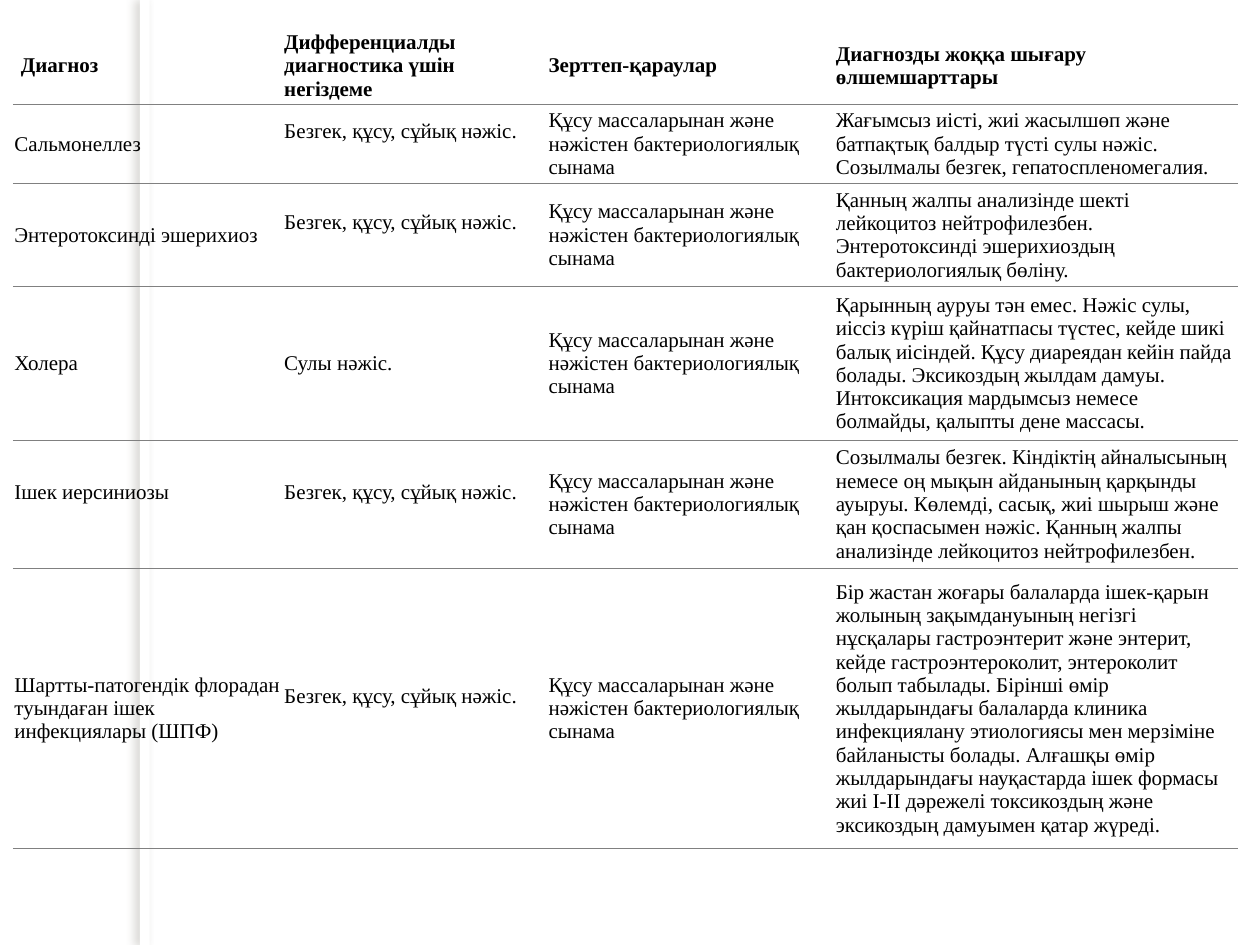
from lxml import etree
from pptx import Presentation
from pptx.dml.color import RGBColor
from pptx.enum.shapes import MSO_SHAPE
from pptx.enum.text import MSO_ANCHOR
from pptx.oxml.ns import qn
from pptx.util import Cm, Pt

RECTANGLE = MSO_SHAPE.RECTANGLE
MIDDLE = MSO_ANCHOR.MIDDLE

COLORS = {"text": "000000", "rule": "808080", "bar": "FFFFFF", "shadow": "706B5F"}
INSET = Cm(0.03)
HEADER_INDENT = Cm(0.13)
TEXT_RAISE = Cm(0.5)

FEVER = "Безгек, құсу, сұйық нәжіс."
STOOL_TEST = "Құсу массаларынан және нәжістен бактериологиялық сынама"

HEADERS = [
    "Диагноз",
    "Дифференциалды диагностика үшін негіздеме",
    "Зерттеп-қараулар",
    "Диагнозды жоққа шығару өлшемшарттары",
]
# Diagnosis, grounds, exclusion criteria; the examination is the same for all
DIAGNOSES = [
    ("Сальмонеллез", FEVER,
     "Жағымсыз иісті, жиі жасылшөп және батпақтық балдыр түсті сулы нәжіс. "
     "Созылмалы безгек, гепатоспленомегалия."),
    ("Энтеротоксинді эшерихиоз", FEVER,
     "Қанның жалпы анализінде шекті лейкоцитоз нейтрофилезбен. "
     "Энтеротоксинді эшерихиоздың бактериологиялық бөліну."),
    ("Холера", "Сулы нәжіс.",
     "Қарынның ауруы тән емес. Нәжіс сулы, иіссіз күріш қайнатпасы түстес, "
     "кейде шикі балық иісіндей. Құсу диареядан кейін пайда болады. "
     "Эксикоздың жылдам дамуы. Интоксикация мардымсыз немесе болмайды, "
     "қалыпты дене массасы."),
    ("Ішек иерсиниозы", FEVER,
     "Созылмалы безгек. Кіндіктің айналысының немесе оң мықын айданының "
     "қарқынды ауыруы. Көлемді, сасық, жиі шырыш және қан қоспасымен нәжіс. "
     "Қанның жалпы анализінде лейкоцитоз нейтрофилезбен."),
    ("Шартты-патогендік флорадан туындаған ішек инфекциялары (ШПФ)", FEVER,
     "Бір жастан жоғары балаларда ішек-қарын жолының зақымдануының негізгі "
     "нұсқалары гастроэнтерит және энтерит, кейде гастроэнтероколит, "
     "энтероколит болып табылады. Бірінші өмір жылдарындағы балаларда клиника "
     "инфекциялану этиологиясы мен мерзіміне байланысты болады. Алғашқы өмір "
     "жылдарындағы науқастарда ішек формасы жиі І-ІІ дәрежелі токсикоздың "
     "және эксикоздың дамуымен қатар жүреді."),
]
ROWS = [HEADERS] + [(name, grounds, STOOL_TEST, criteria)
                    for name, grounds, criteria in DIAGNOSES]
RAISED = {FEVER, "Ішек иерсиниозы"}
COLUMN_WIDTHS = [5.44, 5.33, 5.79, 8.13]
ROW_HEIGHTS = [1.57, 1.59, 2.08, 3.1, 2.58, 5.65]

CELL_FORMAT = {
    "vertical_anchor": MIDDLE,
    "margin_left": INSET,
    "margin_right": INSET,
    "margin_top": INSET,
    "margin_bottom": INSET,
}
FONT_FORMAT = {"name": "Times New Roman", "size": Pt(12)}


def add_color(parent, color, alpha=None):
    rgb = etree.SubElement(parent, qn("a:srgbClr"), val=COLORS[color])
    if alpha is not None:
        etree.SubElement(rgb, qn("a:alpha"), val=str(alpha * 1000))


def add_border(cell, side, visible):
    line = etree.SubElement(cell._tc.get_or_add_tcPr(), qn(f"a:ln{side}"),
                            w=str(Pt(0.75)))
    if visible:
        add_color(etree.SubElement(line, qn("a:solidFill")), "rule")
    else:
        etree.SubElement(line, qn("a:noFill"))


prs = Presentation()
prs.slide_width, prs.slide_height = Cm(25.4), Cm(19.05)
slide = prs.slides.add_slide(prs.slide_layouts[6])

# Vertical bar with a soft shadow to its left
bar = slide.shapes.add_shape(RECTANGLE, Cm(2.82), 0, Cm(0.2), prs.slide_height)
bar.fill.solid()
bar.fill.fore_color.rgb = RGBColor.from_string(COLORS["bar"])
bar.line.fill.background()
bar.shadow.inherit = False
effects = bar._element.spPr.find(qn("a:effectLst"))
bar_shadow = etree.SubElement(effects, qn("a:outerShdw"), blurRad=str(Pt(5)),
                              dist=str(Pt(3)), dir=str(180 * 60000))
add_color(bar_shadow, "shadow", alpha=25)

# Table of differential diagnoses
diagnosis_table = slide.shapes.add_table(
    len(ROWS), len(HEADERS), Cm(0.26), Cm(0.54),
    Cm(sum(COLUMN_WIDTHS)), Cm(sum(ROW_HEIGHTS))).table
diagnosis_table.first_row = False
diagnosis_table.horz_banding = False
for column, width in zip(diagnosis_table.columns, COLUMN_WIDTHS):
    column.width = Cm(width)
for row, height in zip(diagnosis_table.rows, ROW_HEIGHTS):
    row.height = Cm(height)

# Cell text, insets and rules between the rows
for r, texts in enumerate(ROWS):
    for c, text in enumerate(texts):
        cell = diagnosis_table.cell(r, c)
        cell.text = text
        for attribute, value in CELL_FORMAT.items():
            setattr(cell, attribute, value)
        if text in RAISED:
            cell.margin_bottom = INSET + TEXT_RAISE
        if text == HEADERS[0]:
            cell.margin_left = INSET + HEADER_INDENT
        font = cell.text_frame.paragraphs[0].runs[0].font
        for attribute, value in FONT_FORMAT.items():
            setattr(font, attribute, value)
        font.bold = r == 0
        font.color.rgb = RGBColor.from_string(COLORS["text"])
        for side in "LRTB":
            add_border(cell, side, side == "B" or (side == "T" and r > 0))
        cell.fill.background()

prs.save("out.pptx")
